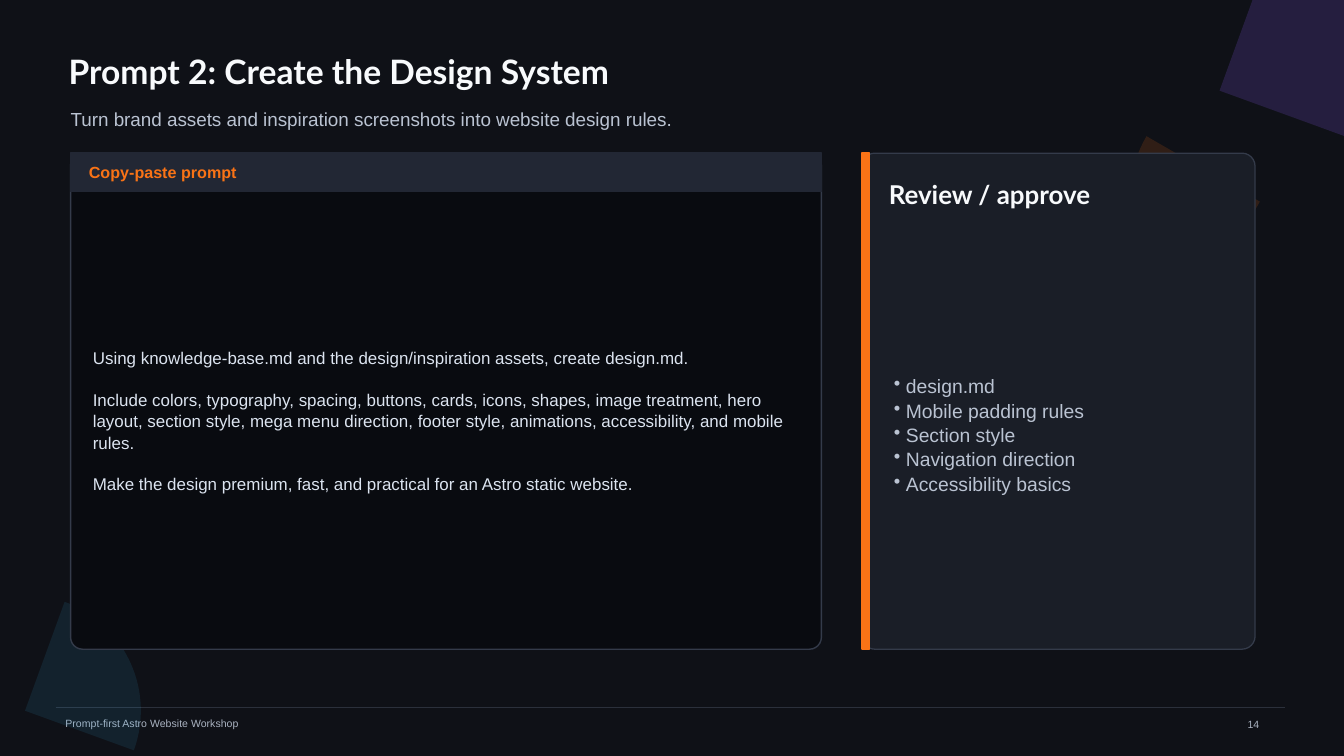
from lxml import etree
from pptx import Presentation
from pptx import util as u
from pptx.dml.color import RGBColor
from pptx.enum import shapes, text
from pptx.oxml.ns import qn

COLORS = {
    "background": "0F1117", "rule": "2B303B", "footer": "AAB3C1",
    "purple": "8B5CF6", "orange": "F97316", "blue": "38BDF8",
    "white": "F8FAFC", "muted": "BAC3D2", "prompt": "DCE4F0",
    "code": "090B10", "header": "222734", "card": "1A1E27", "border": "343B4A",
}
PANEL_TOP, PANEL_HEIGHT = 3.86, 12.5


def color(name):
    return RGBColor.from_string(COLORS[name])


def add_text(slide, box, content, *, size, fill, font="Arial", bold=False,
             anchor=text.MSO_ANCHOR.MIDDLE, inset=(0, 0), line_spacing=None,
             gap=0, bullet_indent=None):
    """Add a text box; content is one string or a list of paragraphs."""
    frame = slide.shapes.add_textbox(*map(u.Cm, box)).text_frame
    frame.word_wrap = True
    frame.vertical_anchor = anchor
    frame.margin_left = frame.margin_right = u.Cm(inset[0])
    frame.margin_top = frame.margin_bottom = u.Cm(inset[1])
    lines = [content] if isinstance(content, str) else content
    for index, line in enumerate(lines):
        paragraph = frame.add_paragraph() if index else frame.paragraphs[0]
        if line_spacing:
            paragraph.line_spacing = line_spacing
        if index and gap:
            paragraph.space_before = u.Pt(gap)
        if bullet_indent:
            properties = paragraph._p.get_or_add_pPr()
            properties.set("marL", str(u.Cm(bullet_indent)))
            properties.set("indent", str(-u.Cm(bullet_indent)))
            etree.SubElement(properties, qn("a:buChar")).set("char", "•")
        run = paragraph.add_run()
        run.text = line
        run.font.name = font
        run.font.size = u.Pt(size)
        run.font.bold = bold
        run.font.color.rgb = color(fill)


def add_block(slide, kind, box, fill, border=None, width=1, radius=None):
    shape = slide.shapes.add_shape(kind, *map(u.Cm, box))
    shape.shadow.inherit = False
    shape.fill.solid()
    shape.fill.fore_color.rgb = color(fill)
    if border:
        shape.line.color.rgb = color(border)
        shape.line.width = u.Pt(width)
    else:
        shape.line.fill.background()
    if radius:
        shape.adjustments[0] = radius
    return shape


def add_arc(slide, left, top, size, fill, rotation, opacity):
    shape = add_block(slide, shapes.MSO_SHAPE.ARC, (left, top, size, size), fill)
    shape.rotation = rotation
    solid_color = shape._element.spPr.find(qn("a:solidFill"))[0]
    etree.SubElement(solid_color, qn("a:alpha")).set("val", str(opacity * 1000))


def add_rule(slide, left, right, top):
    line = slide.shapes.add_connector(
        shapes.MSO_CONNECTOR.STRAIGHT, *map(u.Cm, (left, top, right, top)))
    line.line.color.rgb = color("rule")
    line.line.width = u.Pt(0.75)
    etree.SubElement(line._element.spPr, qn("a:effectLst"))


def main():
    presentation = Presentation()
    presentation.slide_width = u.Cm(33.87)
    presentation.slide_height = u.Cm(19.05)
    slide = presentation.slides.add_slide(presentation.slide_layouts[6])
    slide.background.fill.solid()
    slide.background.fill.fore_color.rgb = color("background")
    rectangle = shapes.MSO_SHAPE.RECTANGLE
    rounded = shapes.MSO_SHAPE.ROUNDED_RECTANGLE

    # Footer
    add_rule(slide, 1.4, 32.39, 17.83)
    add_text(slide, (1.65, 17.98, 13.97, 0.51),
             "Prompt-first Astro Website Workshop", size=7.5, fill="footer")

    # Background decoration
    add_arc(slide, 25.91, -2.54, 9.65, "purple", 20, 18)
    add_arc(slide, 28.45, 1.78, 6.6, "orange", 210, 14)
    add_arc(slide, -2.29, 14.99, 5.84, "blue", 20, 10)

    # Heading
    add_text(slide, (1.73, 1.14, 26.92, 1.32), "Prompt 2: Create the Design System",
             size=24, fill="white", font="Lato", bold=True)
    add_text(slide, (1.78, 2.64, 26.92, 0.69),
             "Turn brand assets and inspiration screenshots into website design rules.",
             size=13.5, fill="muted")

    # Prompt panel
    add_block(slide, rounded, (1.78, PANEL_TOP, 18.92, PANEL_HEIGHT),
              "code", "border", radius=0.024)
    add_block(slide, rectangle, (1.78, PANEL_TOP, 18.92, 0.97), "header", "header")
    add_text(slide, (2.24, 4.17, 18.01, 0.33), "Copy-paste prompt",
             size=11.5, fill="orange", bold=True)
    add_text(slide, (2.34, 5.26, 17.81, 10.67), [
        "Using knowledge-base.md and the design/inspiration assets, create design.md.",
        "Include colors, typography, spacing, buttons, cards, icons, shapes, image "
        "treatment, hero layout, section style, mega menu direction, footer style, "
        "animations, accessibility, and mobile rules.",
        "Make the design premium, fast, and practical for an Astro static website.",
    ], size=12.1, fill="prompt", line_spacing=1.05, gap=14.5)

    # Review card
    add_block(slide, rounded, (21.72, PANEL_TOP, 9.91, PANEL_HEIGHT),
              "card", "border", width=0.9, radius=0.033)
    add_block(slide, rectangle, (21.72, PANEL_TOP, 0.2, PANEL_HEIGHT), "orange", "orange")
    add_text(slide, (22.4, 4.55, 8.69, 0.71), "Review / approve",
             size=18.5, fill="white", font="Lato", bold=True)
    add_text(slide, (22.53, 5.94, 8.51, 10.01), [
        "design.md", "Mobile padding rules", "Section style",
        "Navigation direction", "Accessibility basics",
    ], size=13.8, fill="muted", line_spacing=1.05, bullet_indent=0.3)

    # Slide number
    add_text(slide, (31.19, 17.96, 2.21, 0.84), "14", size=7.5, fill="footer",
             anchor=text.MSO_ANCHOR.TOP, inset=(0.25, 0.13))

    presentation.save("out.pptx")


if __name__ == "__main__":
    main()
